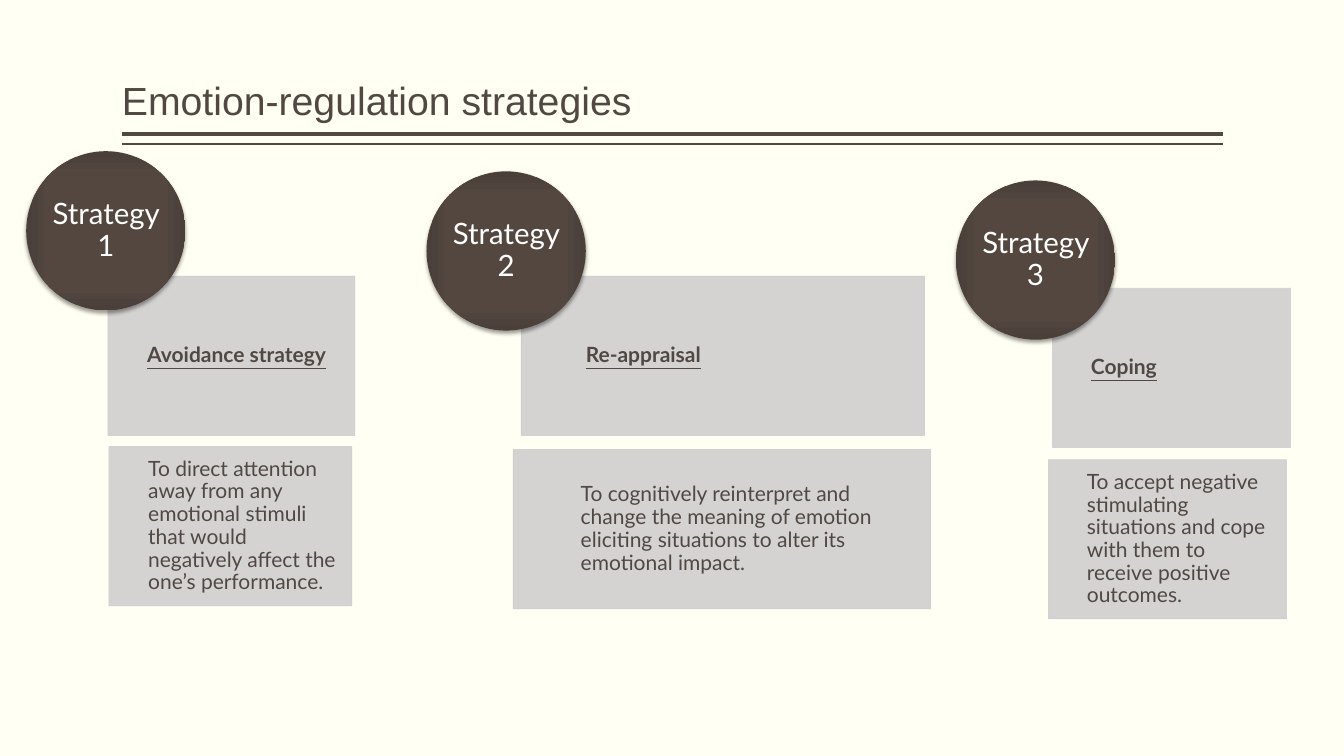
from lxml import etree
from pptx import Presentation
from pptx.dml.color import RGBColor
from pptx.enum.shapes import MSO_CONNECTOR, MSO_SHAPE
from pptx.enum.text import MSO_ANCHOR, MSO_AUTO_SIZE, PP_ALIGN
from pptx.oxml import parse_xml
from pptx.oxml.ns import qn
from pptx.util import Inches, Pt

RECT, OVAL = MSO_SHAPE.RECTANGLE, MSO_SHAPE.OVAL
LEFT, CENTER = PP_ALIGN.LEFT, PP_ALIGN.CENTER
MIDDLE, BOTTOM = MSO_ANCHOR.MIDDLE, MSO_ANCHOR.BOTTOM
CREAM = RGBColor(0xFF, 0xFF, 0xF3)
BROWN = RGBColor(0x51, 0x48, 0x43)
GREY = RGBColor(0xD0, 0xCF, 0xCF)
WHITE = RGBColor(0xFF, 0xFF, 0xFF)

NS = 'xmlns:a="http://schemas.openxmlformats.org/drawingml/2006/main"'
GRADIENT = f"""<a:gradFill {NS} rotWithShape="1"><a:gsLst>
<a:gs pos="0"><a:srgbClr val="544740"/></a:gs>
<a:gs pos="71000"><a:srgbClr val="534740"/></a:gs>
<a:gs pos="100000"><a:srgbClr val="4A3F39"/></a:gs></a:gsLst>
<a:path path="rect"><a:fillToRect l="50000" t="50000" r="50000" b="50000"/></a:path>
</a:gradFill>"""
SHADOW = f"""<a:effectLst {NS}>
<a:outerShdw blurRad="39370" dist="25400" dir="5400000" rotWithShape="0">
<a:srgbClr val="000000"><a:alpha val="38000"/></a:srgbClr>
</a:outerShdw></a:effectLst>"""

BOX_H = 1.58
TITLE_X, TITLE_W = 1.21, 10.92
STRATEGIES = [
    ((0.26, 1.5), "Avoidance strategy", (1.07, 2.74, 2.45), 0.39,
     "To direct attention away from any emotional stimuli that would "
     "negatively affect the one’s performance.", (1.08, 4.43, 2.41), 0.39),
    ((4.23, 1.7), "Re-appraisal", (5.17, 2.74, 4), 0.64,
     "To cognitively reinterpret and change the meaning of emotion "
     "eliciting situations to alter its emotional impact.", (5.09, 4.46, 4.14), 0.67),
    ((9.48, 1.79), "Coping", (10.44, 2.86, 2.36), 0.38,
     "To accept negative stimulating situations and cope with them to "
     "receive positive outcomes.", (10.4, 4.56, 2.36), 0.38),
]


def write(s, text, size, font, color, align, anchor, insets, heading=False):
    """Fill a shape with one formatted paragraph."""
    tf = s.text_frame
    tf.word_wrap = True
    tf.auto_size = MSO_AUTO_SIZE.NONE
    tf.vertical_anchor = anchor
    tf.margin_left, tf.margin_top, tf.margin_right, tf.margin_bottom = map(Inches, insets)
    p = tf.paragraphs[0]
    p.alignment = align
    p.line_spacing = 0.9
    r = p.add_run()
    r.text = text
    r.font.size = Pt(size)
    r.font.name = font
    r.font.color.rgb = color
    r.font.bold = r.font.underline = heading


def add_title(slide, text):
    """Place and format the slide title."""
    s = slide.shapes.title
    s.left, s.top, s.width, s.height = map(Inches, (TITLE_X, 0.08, TITLE_W, 1.2))
    write(s, text, 28, "Arial", BROWN, LEFT, BOTTOM, (0, 0.05, 0, 0.05))


def add_rule(slide, y, weight):
    """Draw a horizontal line under the title."""
    s = slide.shapes.add_connector(
        MSO_CONNECTOR.STRAIGHT, Inches(TITLE_X), Inches(y), Inches(TITLE_X + TITLE_W), Inches(y))
    s.line.color.rgb = BROWN
    s.line.width = Pt(weight)
    etree.SubElement(s._element.spPr, qn("a:effectLst"))


def add_box(slide, place, indent, text, heading=False):
    """Draw a translucent grey box with indented text."""
    x, y, w = place
    s = slide.shapes.add_shape(RECT, Inches(x), Inches(y), Inches(w), Inches(BOX_H))
    s.shadow.inherit = False
    s.fill.solid()
    s.fill.fore_color.rgb = GREY
    s.line.color.rgb = GREY
    s.line.width = Pt(0.5)
    for color in s._element.spPr.iter(qn("a:srgbClr")):
        etree.SubElement(color, qn("a:alpha"), val="90000")
    write(s, text, 15, "Lato", BROWN, LEFT, MIDDLE, (indent, 0.12, 0.12, 0.12), heading)


def add_circle(slide, place, text):
    """Draw a shaded circle with a centred label."""
    x, y = place
    s = slide.shapes.add_shape(OVAL, Inches(x), Inches(y), Inches(BOX_H), Inches(BOX_H))
    s._element.spPr.append(parse_xml(GRADIENT))
    s.line.fill.background()
    s._element.spPr.append(parse_xml(SHADOW))
    write(s, text, 21, "Lato", WHITE, CENTER, MIDDLE, (0, 0, 0, 0))


def main():
    """Build the slide and save it."""
    prs = Presentation()
    prs.slide_width, prs.slide_height = Inches(13.33), Inches(7.5)
    slide = prs.slides.add_slide(prs.slide_layouts[5])
    slide.background.fill.solid()
    slide.background.fill.fore_color.rgb = CREAM
    add_rule(slide, 1.33, 3)
    add_rule(slide, 1.43, 1)
    add_title(slide, "Emotion-regulation strategies")
    for number, strategy in enumerate(STRATEGIES, 1):
        circle, name, name_at, name_indent, detail, detail_at, detail_indent = strategy
        add_box(slide, name_at, name_indent, name, heading=True)
        add_box(slide, detail_at, detail_indent, detail)
        add_circle(slide, circle, f"Strategy {number}")
    prs.save("out.pptx")


if __name__ == "__main__":
    main()
